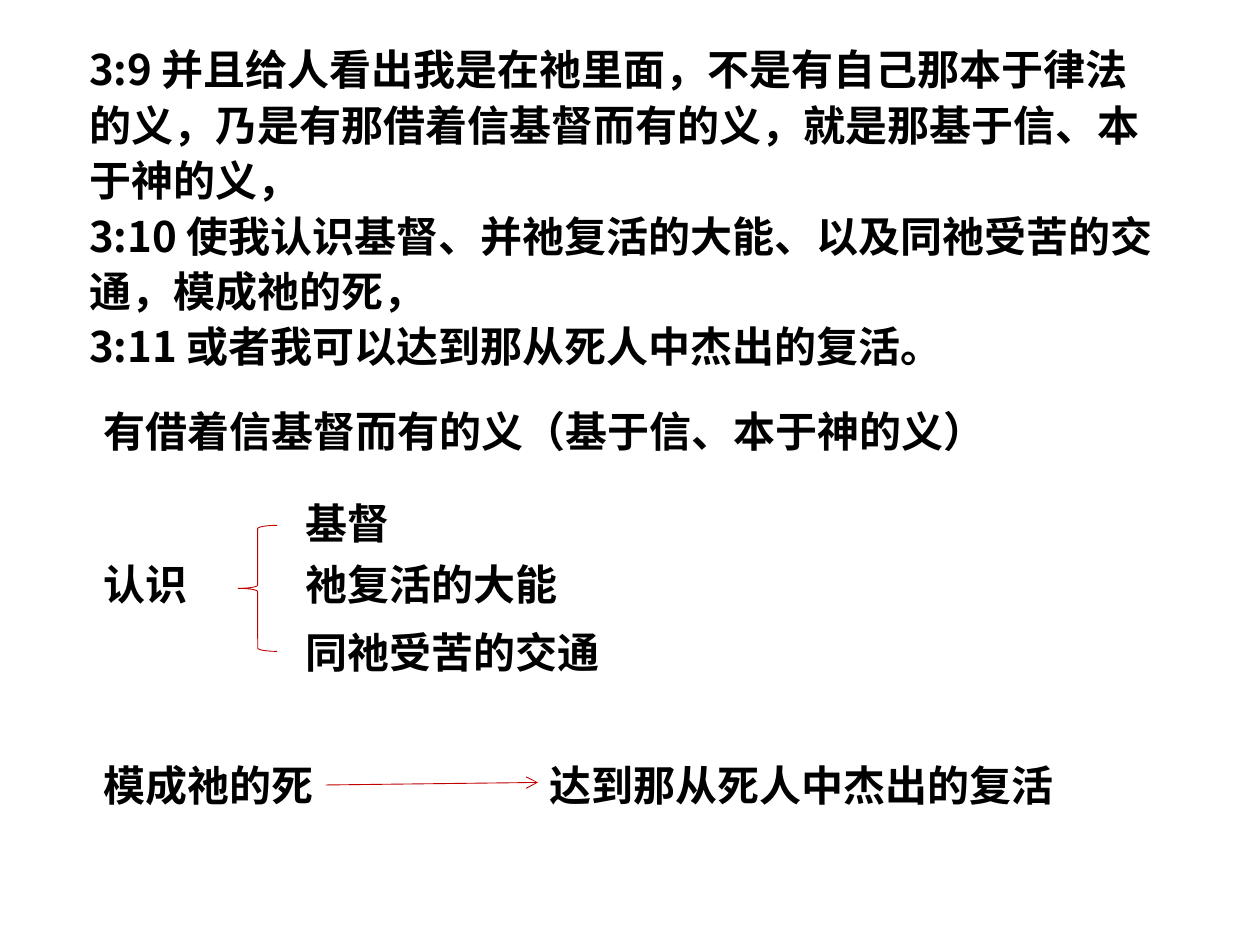
from lxml import etree
from pptx import Presentation, util as u
from pptx.dml.color import RGBColor
from pptx.enum import shapes, text
from pptx.oxml.ns import qn

HUES = {"ink": "000000", "mark": "C00000"}
CJK = "Noto Sans CJK SC"
SIZE = 24
EM = SIZE / 72
PAD = 0.1
ROW = 0.5
LEFT, MID = 0.72, 2.33

VERSES = [
    "3:9 并且给人看出我是在祂里面，不是有自己那本于律法的义，乃是有那借着信基督而有的义，就是那基于信、本于神的义，",
    "3:10 使我认识基督、并祂复活的大能、以及同祂受苦的交通，模成祂的死，",
    "3:11 或者我可以达到那从死人中杰出的复活。",
]
KNOWN = [("基督", 3.9), ("祂复活的大能", 4.38), ("同祂受苦的交通", 4.92)]


class Page:
    def __init__(self, deck):
        self.slide = deck.slides.add_slide(deck.slide_layouts[6])
        self.items = self.slide.shapes

    def block(self, lines, x, y, w, h, font, wrap, gap=None):
        box = self.items.add_textbox(*map(u.Inches, (x, y, w, h)))
        frame = box.text_frame
        frame.text = "\n".join(lines)
        frame.word_wrap = wrap
        frame.auto_size = text.MSO_AUTO_SIZE.SHAPE_TO_FIT_TEXT
        for para in frame.paragraphs:
            para.line_spacing = gap
            for run in para.runs:
                run.font.name = font
                run.font.size = u.Pt(SIZE)
                run.font.bold = True
                run.font.color.rgb = RGBColor.from_string(HUES["ink"])
                latin = run.font._element.find(qn("a:latin"))
                east = etree.Element(qn("a:ea"), typeface=CJK)
                latin.addnext(east)
        return box

    def label(self, words, x, y):
        """Place one line in a box as wide as its square characters."""
        wide = len(words) * EM + 2 * PAD
        return self.block([words], x, y, wide, ROW, "Calibri", False)

    def ink(self, line):
        line.color.rgb = RGBColor.from_string(HUES["mark"])
        line.width = u.Pt(0.5)

    def brace(self, x, y, w, h):
        mark = self.items.add_shape(
            shapes.MSO_SHAPE.LEFT_BRACE, *map(u.Inches, (x, y, w, h)))
        mark.shadow.inherit = False
        mark.fill.background()
        self.ink(mark.line)

    def arrow(self, box, x, y):
        """Draw an arrow from the right side of a box to a point."""
        start = box.left + box.width, box.top + box.height // 2
        link = self.items.add_connector(
            shapes.MSO_CONNECTOR.STRAIGHT, *start, u.Inches(x), u.Inches(y))
        link.begin_connect(box, 3)
        self.ink(link.line)
        props = link._element.spPr
        etree.SubElement(props.find(qn("a:ln")), qn("a:tailEnd"), type="arrow")
        etree.SubElement(props, qn("a:effectLst"))


def main():
    deck = Presentation()
    deck.slide_width, deck.slide_height = u.Inches(10), u.Inches(7.5)
    page = Page(deck)
    page.block(VERSES, 0.61, 0.26, 8.64, 2.76, CJK, True, 1.1)
    page.label("有借着信基督而有的义（基于信、本于神的义）", LEFT, 3.17)
    page.label("认识", LEFT, 4.38)
    for words, y in KNOWN:
        page.label(words, MID, y)
    death = page.label("模成祂的死", LEFT, 5.98)
    page.label("达到那从死人中杰出的复活", 4.26, 5.98)
    page.arrow(death, 4.27, 6.21)
    page.brace(1.89, 4.17, 0.31, 1)
    deck.save("out.pptx")


if __name__ == "__main__":
    main()
